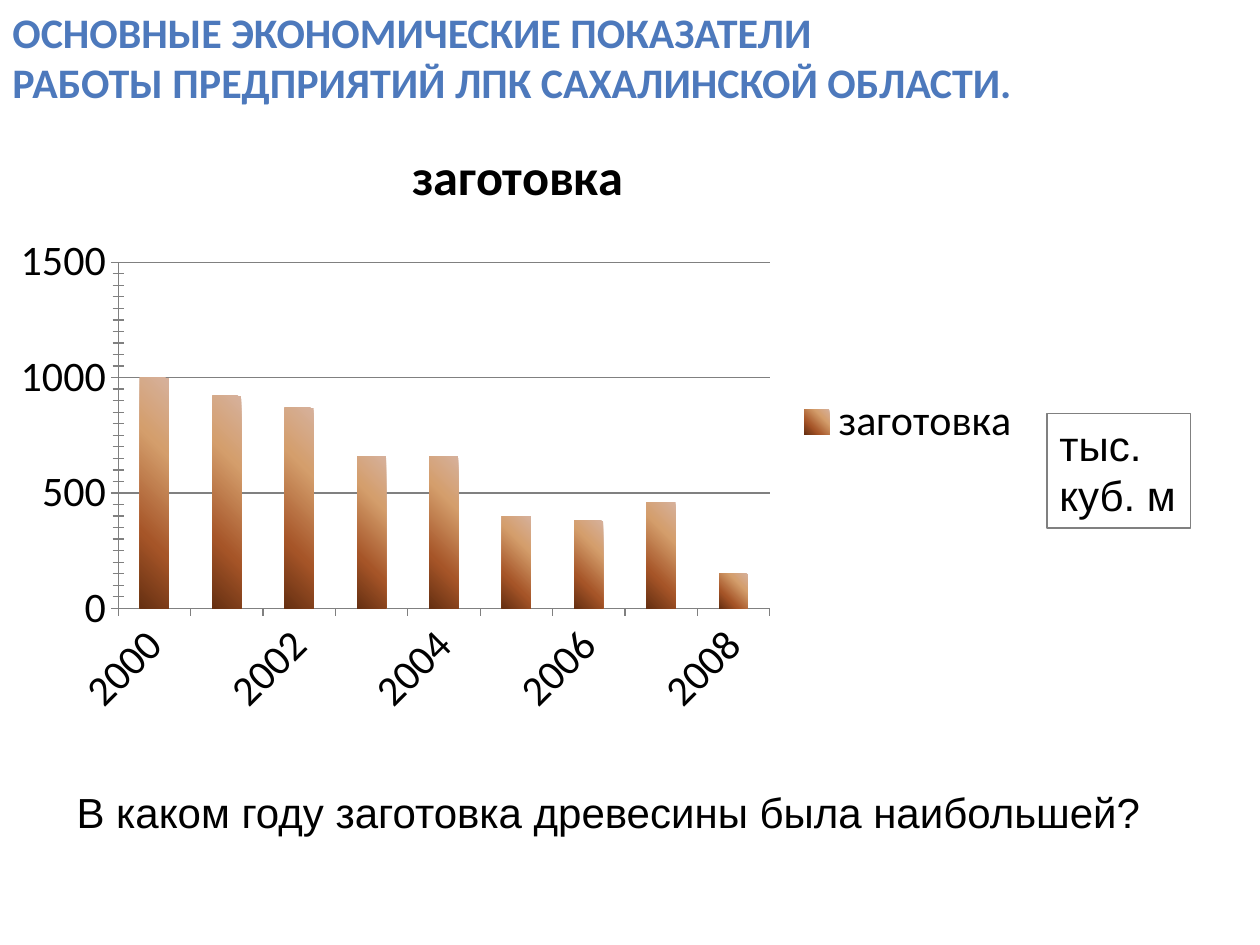
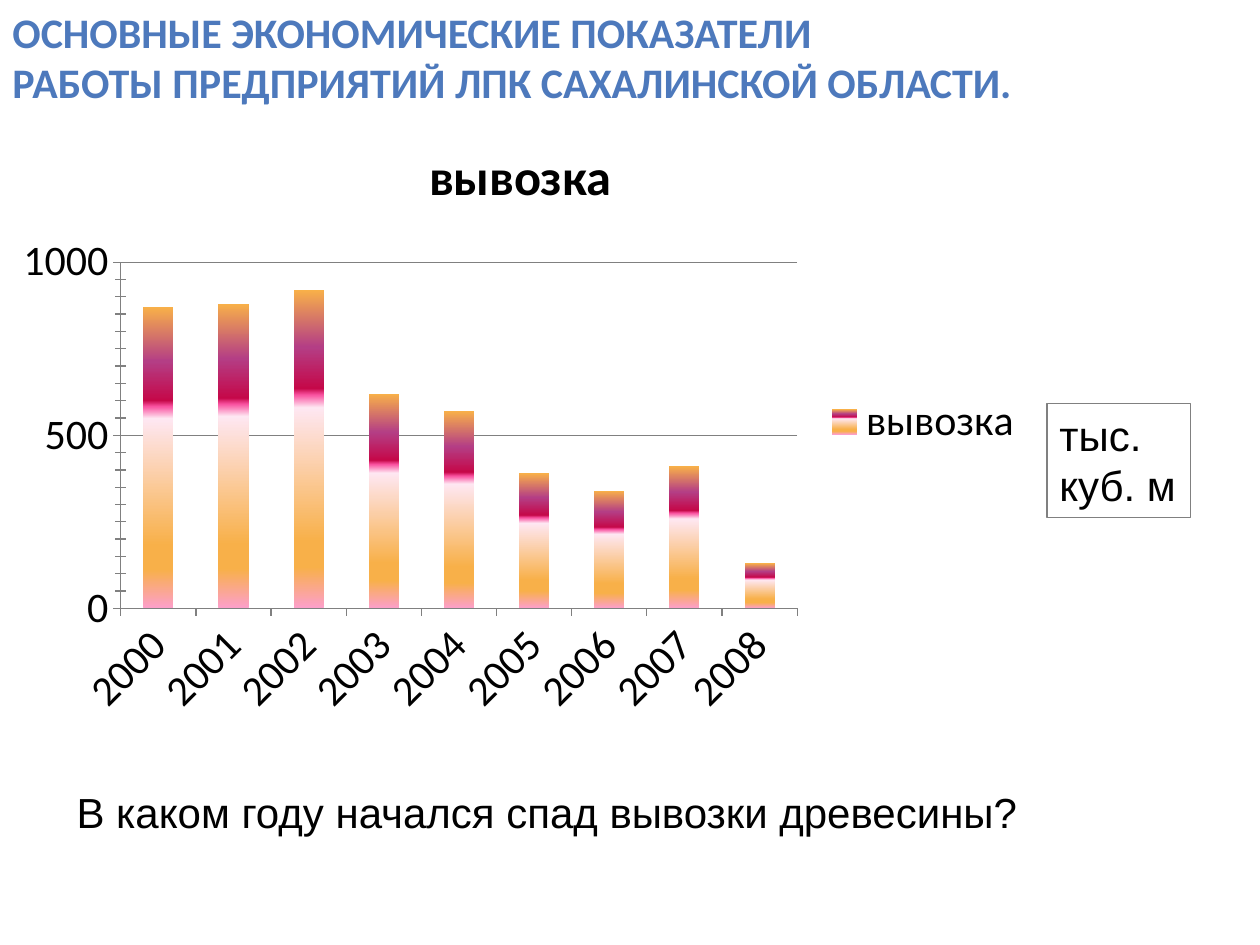
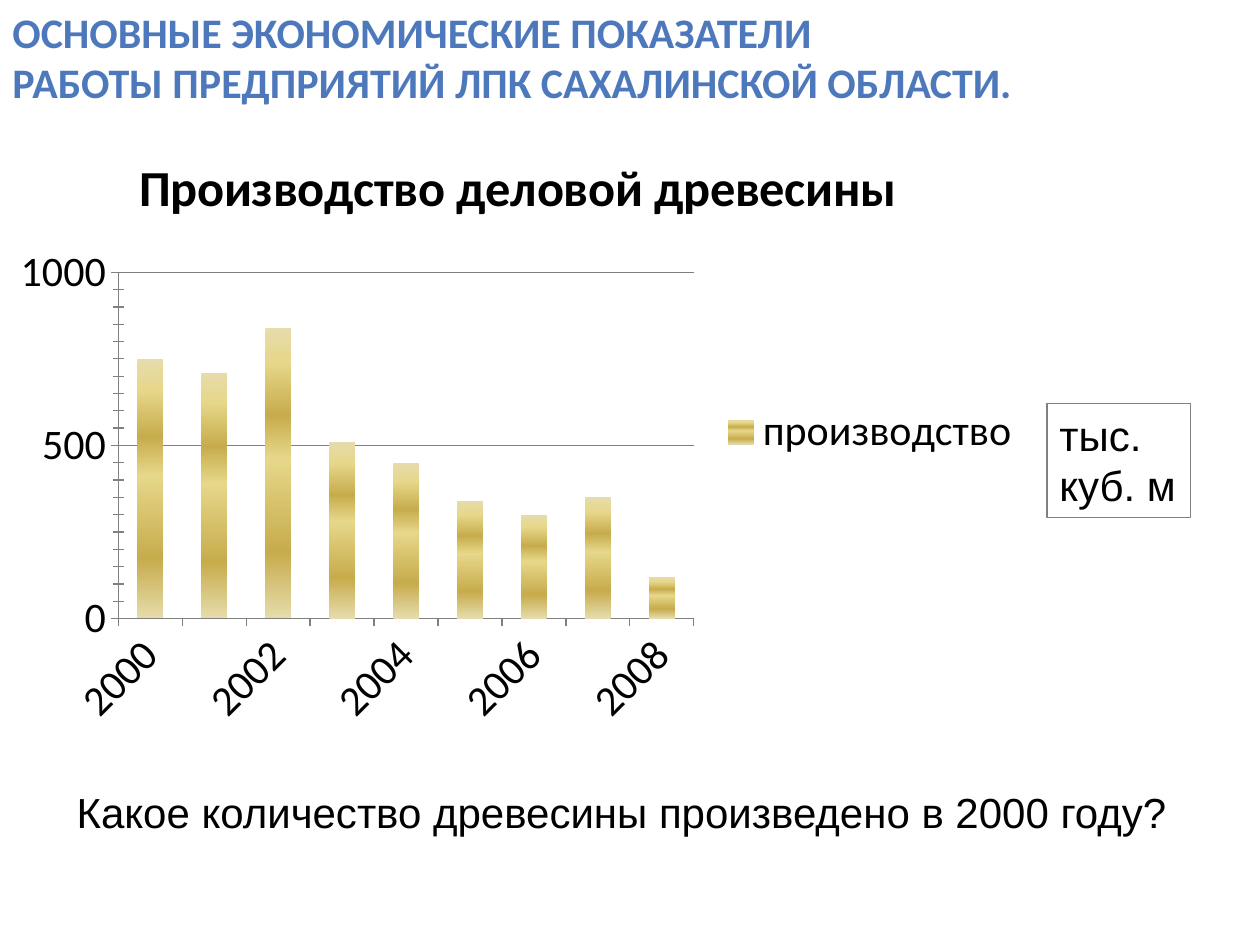
from lxml import etree
from pptx import Presentation
from pptx.chart.data import CategoryChartData as ChartData
from pptx.dml.color import RGBColor as RGB
from pptx.enum.chart import XL_CHART_TYPE as Kind
from pptx.enum.chart import XL_LEGEND_POSITION as Side
from pptx.enum.chart import XL_TICK_MARK as Tick
from pptx.enum.shapes import MSO_SHAPE as Form
from pptx.enum.text import MSO_ANCHOR as Anchor
from pptx.enum.text import MSO_AUTO_SIZE as Fit
from pptx.enum.text import PP_ALIGN as Align
from pptx.oxml.ns import qn
from pptx.util import Inches, Pt

BLACK = RGB(0x00, 0x00, 0x00)
WHITE = RGB(0xFF, 0xFF, 0xFF)
GRAY = RGB(0x80, 0x80, 0x80)

SKY = RGB(0x74, 0x94, 0xC9)
BLUE = RGB(0x4D, 0x79, 0xBC)
OCEAN = RGB(0x34, 0x6A, 0xAA)
STEEL = RGB(0x32, 0x5F, 0x94)
NAVY = RGB(0x31, 0x5D, 0x91)

BEIGE = RGB(0xD6, 0xB1, 0x9C)
TAN = RGB(0xD4, 0x9E, 0x6C)
RUST = RGB(0xA6, 0x55, 0x28)
BROWN = RGB(0x66, 0x30, 0x12)

PINK = RGB(0xFC, 0x9F, 0xCB)
AMBER = RGB(0xF8, 0xB0, 0x49)
BLUSH = RGB(0xFE, 0xE7, 0xF2)
ROSE = RGB(0xF9, 0x52, 0xA0)
RED = RGB(0xC5, 0x08, 0x49)
PLUM = RGB(0xB4, 0x3E, 0x85)

CREAM = RGB(0xE6, 0xDC, 0xAC)
STRAW = RGB(0xE6, 0xD7, 0x8A)
GOLD = RGB(0xC7, 0xAC, 0x4C)

# A blend is an angle, clockwise, and a list of (percent, colour) stops.
HEAD = 90, [(0, SKY), (49, BLUE), (50, OCEAN), (92, STEEL), (100, NAVY)]
BARK = 135, [(0, BEIGE), (30, TAN), (70, RUST), (100, BROWN)]
DAWN = 270, [(0, PINK), (13, AMBER), (21, AMBER), (63, BLUSH),
             (67, ROSE), (69, RED), (82, PLUM), (100, AMBER)]
BRASS = 90, [(0, CREAM), (12, STRAW), (30, GOLD), (45, STRAW),
             (77, GOLD), (100, CREAM)]

TITLE = ["ОСНОВНЫЕ ЭКОНОМИЧЕСКИЕ ПОКАЗАТЕЛИ",
         "РАБОТЫ ПРЕДПРИЯТИЙ ЛПК САХАЛИНСКОЙ ОБЛАСТИ."]
UNIT = ["тыс.", "куб. м"]
YEARS = [str(year) for year in range(2000, 2009)]

# chart title, series name, values, axis top, blend, chart column and row,
# unit row, question, question width
PAGES = [
    ("заготовка", "заготовка",
     [1000, 920, 870, 660, 660, 400, 380, 460, 150], 1500, BARK,
     (0, 9.1), 32.8,
     "В каком году заготовка древесины была наибольшей?", 87.3),
    ("вывозка", "вывозка",
     [870, 880, 920, 620, 570, 390, 340, 410, 130], 1000, DAWN,
     (0.2, 9.1), 32,
     "В каком году начался спад вывозки древесины?", 77.4),
    ("Производство деловой древесины", "производство",
     [750, 710, 840, 510, 450, 340, 300, 350, 120], 1000, BRASS,
     (0, 9.9), 32,
     "Какое количество древесины произведено в 2000 году?", 89.4),
]


class Deck:
    """Slides on a grid of 100 columns by 75 rows."""

    size = Pt(24)
    body = "Arial"
    head = "Calibri"

    def __init__(self):
        self.show = Presentation()
        self.show.slide_width = Inches(10)
        self.show.slide_height = Inches(7.5)
        self.slide = None

    def page(self):
        self.slide = self.show.slides.add_slide(self.show.slide_layouts[6])

    def place(self, col, row, wide, high):
        cell = self.show.slide_width / 100
        return [round(part * cell) for part in (col, row, wide, high)]

    def blend(self, fill, host, look):
        """Give fill, held in the XML element host, a gradient."""
        angle, stops = look
        fill.gradient()
        fill.gradient_angle = 360 - angle
        bag = next(host.iter(qn("a:gsLst")))
        for old in list(bag):
            bag.remove(old)
        for share, color in stops:
            stop = etree.SubElement(bag, qn("a:gs"), pos=str(share * 1000))
            etree.SubElement(stop, qn("a:srgbClr"), val=str(color))

    def text(self, shape, lines, font, wrap=False, look=None):
        frame = shape.text_frame
        frame.word_wrap = wrap
        frame.auto_size = Fit.SHAPE_TO_FIT_TEXT
        frame.vertical_anchor = Anchor.TOP
        for num, line in enumerate(lines):
            para = frame.add_paragraph() if num else frame.paragraphs[0]
            para.alignment = Align.LEFT
            run = para.add_run()
            run.text = line
            run.font.size = self.size
            run.font.name = font
            if look:
                run.font.bold = True
                self.blend(run.font.fill, run._r, look)
            else:
                run.font.color.rgb = BLACK

    def rect(self, *spot):
        shape = self.slide.shapes.add_shape(Form.RECTANGLE, *self.place(*spot))
        shape.shadow.inherit = False
        return shape

    def title(self):
        band = self.rect(0, 0, 100, 9.1)
        band.fill.solid()
        band.fill.fore_color.rgb = WHITE
        band.line.fill.background()
        self.text(band, TITLE, self.head, True, HEAD)

    def unit(self, row):
        box = self.rect(83.1, row, 11.4, 9.1)
        box.fill.background()
        box.line.color.rgb = GRAY
        box.line.width = Pt(0.75)
        self.text(box, UNIT, self.body)

    def ask(self, line, wide):
        box = self.slide.shapes.add_textbox(*self.place(5.1, 61.9, wide, 5))
        self.text(box, [line], self.body)

    def style(self, font):
        font.size = self.size
        font.name = self.head
        font.color.rgb = BLACK

    def chart(self, spot, title, name, vals, top, look):
        data = ChartData()
        data.categories = YEARS
        data.add_series(name, vals)
        chart = self.slide.shapes.add_chart(
            Kind.COLUMN_STACKED, *self.place(*spot, 82.2, 48.8), data).chart
        self.style(chart.font)

        chart.has_title = True
        run = chart.chart_title.text_frame.paragraphs[0].add_run()
        run.text = title
        self.style(run.font)
        run.font.size = Pt(28.8)
        run.font.bold = True
        chart.chart_title.include_in_layout = False

        chart.has_legend = True
        chart.legend.position = Side.RIGHT
        chart.legend.include_in_layout = False

        plot = chart.plots[0]
        plot.gap_width = 150
        plot.overlap = 100
        plot.vary_by_categories = False
        bars = plot.series[0]
        self.blend(bars.format.fill, bars._element, look)

        scale = chart.value_axis
        scale.minimum_scale = 0
        scale.maximum_scale = top
        scale.major_unit = 500
        scale.minor_unit = 50
        scale.minor_tick_mark = Tick.CROSS
        scale.has_major_gridlines = True
        for axis in (scale, chart.category_axis):
            axis.major_tick_mark = Tick.OUTSIDE
        for part in (scale, chart.category_axis, scale.major_gridlines):
            part.format.line.color.rgb = GRAY
            part.format.line.width = Pt(0.75)


def main():
    deck = Deck()
    for title, name, vals, top, look, spot, row, line, wide in PAGES:
        deck.page()
        deck.title()
        deck.chart(spot, title, name, vals, top, look)
        deck.unit(row)
        deck.ask(line, wide)
    deck.show.save("out.pptx")


if __name__ == "__main__":
    main()
